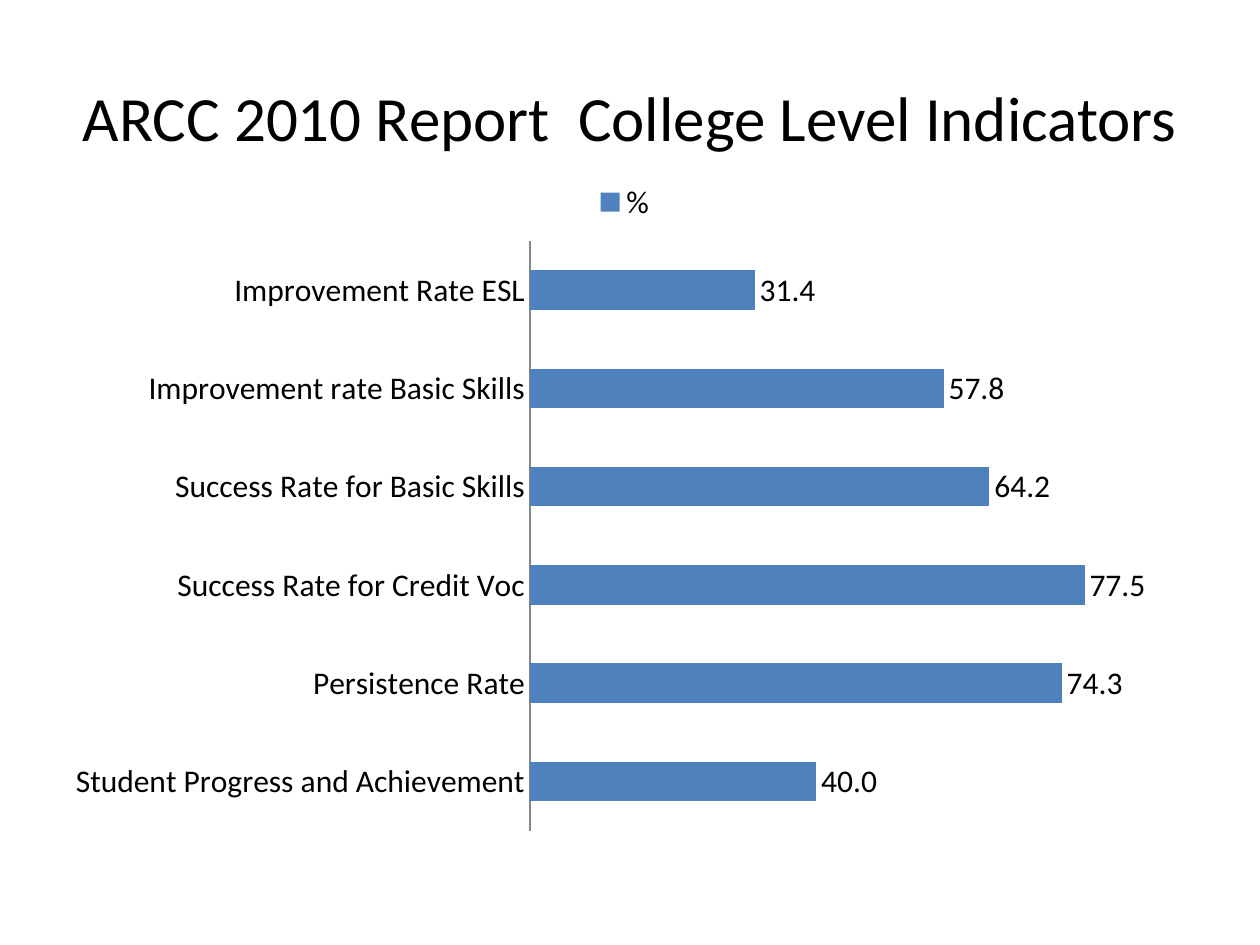
from pptx import Presentation
from pptx.chart.data import CategoryChartData
from pptx.dml.color import RGBColor
from pptx.enum.chart import XL_CHART_TYPE, XL_LABEL_POSITION, XL_LEGEND_POSITION, XL_TICK_MARK
from pptx.enum.text import MSO_ANCHOR, PP_ALIGN
from pptx.util import Inches, Pt


def paint(obj, color):
    obj.fill.solid()
    obj.fill.fore_color.rgb = RGBColor.from_string(color)


def style(font, size):
    font.name = "Calibri"
    font.size = Pt(size)
    paint(font, "000000")


prs = Presentation()
prs.slide_width = Inches(10)
prs.slide_height = Inches(7.5)
slide = prs.slides.add_slide(prs.slide_layouts[6])
paint(slide.background, "FFFFFF")

# Title
title = slide.shapes.add_textbox(Inches(0.5), Inches(0.3), Inches(9), Inches(1.25))
frame = title.text_frame
frame.word_wrap = True
frame.vertical_anchor = MSO_ANCHOR.MIDDLE
para = frame.paragraphs[0]
para.alignment = PP_ALIGN.CENTER
run = para.add_run()
run.text = "ARCC 2010 Report  College Level Indicators"
style(run.font, 36)

# Indicator rates, listed from the bottom bar up
rates = {
    "Student Progress and Achievement": 40.0,
    "Persistence Rate": 74.3,
    "Success Rate for Credit Voc": 77.5,
    "Success Rate for Basic Skills": 64.2,
    "Improvement rate Basic Skills": 57.8,
    "Improvement Rate ESL": 31.4,
}
data = CategoryChartData(number_format="0.0")
data.categories = list(rates)
data.add_series("%", list(rates.values()))

# Bar chart
chart = slide.shapes.add_chart(
    XL_CHART_TYPE.BAR_CLUSTERED,
    Inches(0.42), Inches(1.33), Inches(9.08), Inches(5.37), data,
).chart
style(chart.font, 18)
chart.has_title = False
chart.has_legend = True
chart.legend.position = XL_LEGEND_POSITION.TOP
chart.legend.include_in_layout = False

# Axes
names = chart.category_axis
names.major_tick_mark = XL_TICK_MARK.NONE
names.format.line.color.rgb = RGBColor.from_string("868686")
names.format.line.width = Pt(0.75)
scale = chart.value_axis
scale.visible = False
scale.has_major_gridlines = False
scale.minimum_scale = 0
scale.maximum_scale = 90

# Bars and value labels
plot = chart.plots[0]
plot.gap_width = 150
plot.overlap = -25
plot.vary_by_categories = False
paint(plot.series[0].format, "4F81BD")
plot.has_data_labels = True
labels = plot.data_labels
labels.show_value = True
labels.number_format = "0.0"
labels.number_format_is_linked = False
labels.position = XL_LABEL_POSITION.OUTSIDE_END
style(labels.font, 18)

prs.save("out.pptx")
